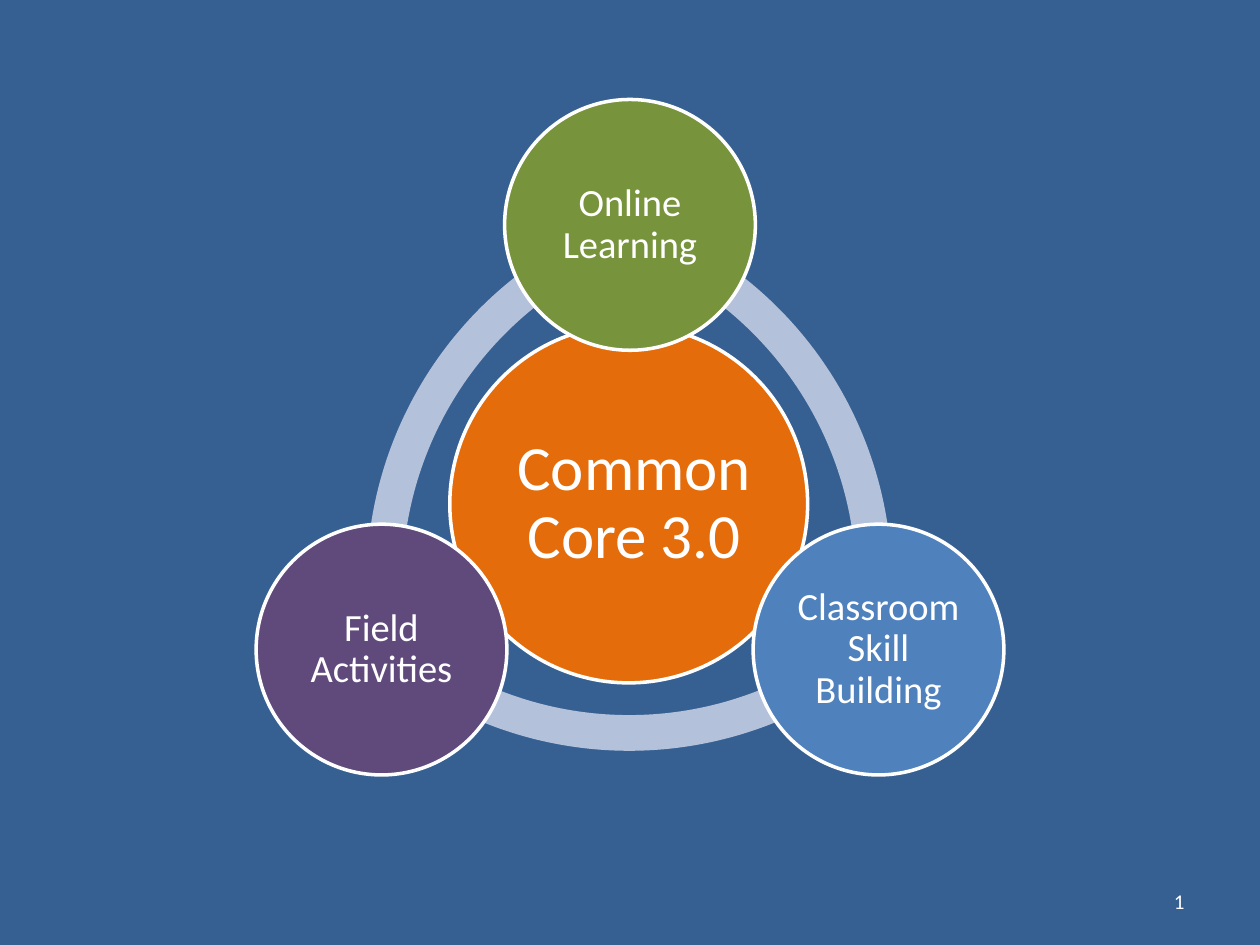
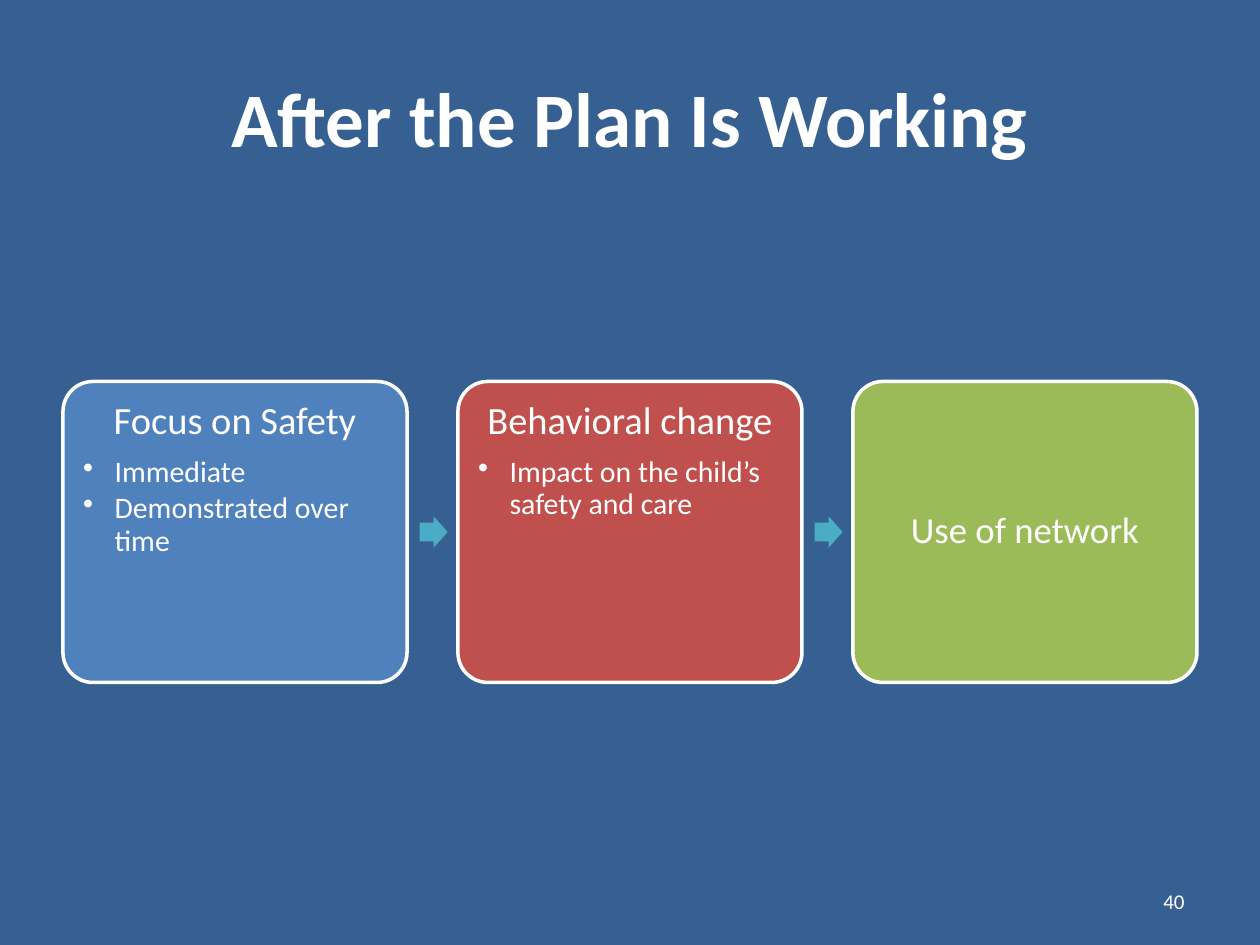
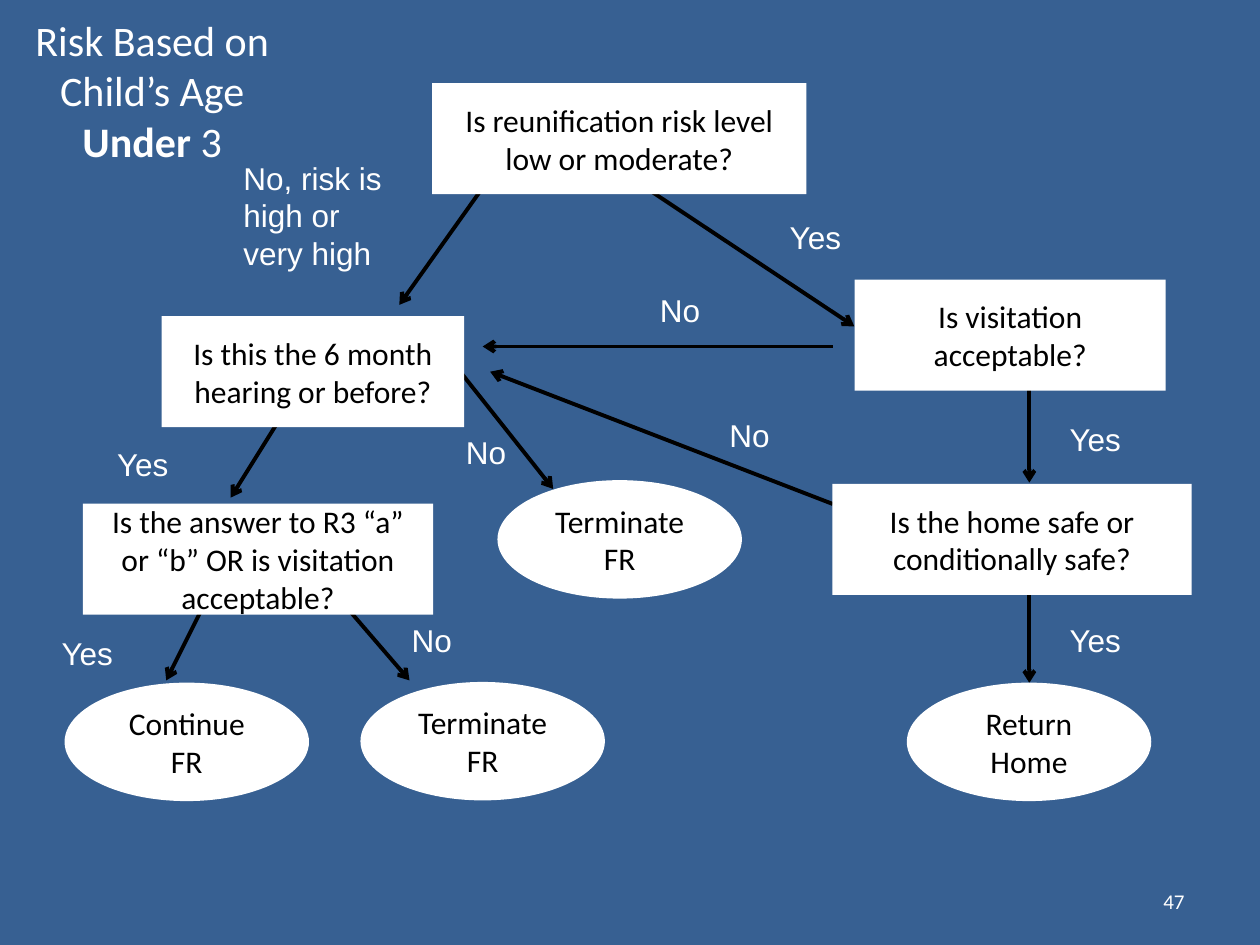
"""Build three training slides: the curriculum ring, a step process and a risk decision tree."""
from dataclasses import dataclass
from typing import NamedTuple

from lxml.etree import SubElement
from pptx import Presentation
from pptx.dml.color import RGBColor
from pptx.enum.shapes import MSO_CONNECTOR as Connector, MSO_SHAPE as Shape
from pptx.enum.text import MSO_ANCHOR as Anchor, PP_ALIGN as Align
from pptx.oxml.ns import qn
from pptx.util import Pt


@dataclass(frozen=True)
class Theme:
    background: str = "376092"
    white: str = "FFFFFF"
    black: str = "000000"
    ring: str = "B3C1DB"
    orange: str = "E46C0A"
    olive: str = "77933C"
    blue: str = "4F81BD"
    purple: str = "604A7B"
    red: str = "C0504D"
    green: str = "9BBB59"
    teal: str = "4BACC6"
    font: str = "Calibri"
    label_font: str = "Arial"
    title: int = 44
    hub: int = 36
    side_title: int = 24
    heading: int = 22
    last_heading: int = 21
    body: int = 18
    bullet: int = 17
    footer: int = 12


THEME = Theme()
TEXT_INSETS = (7.2, 3.6, 7.2, 3.6)


class Box(NamedTuple):
    left: float
    top: float
    width: float
    height: float


class Circle(NamedTuple):
    text: str
    x: float
    y: float
    diameter: float
    fill: str
    size: int
    insets: tuple


class Arc(NamedTuple):
    x: float
    y: float
    start: float
    end: float


class Step(NamedTuple):
    heading: str
    size: int
    fill: str
    bullets: tuple


class Node(NamedTuple):
    text: str
    left: float
    top: float
    width: float = 139.7
    height: float = 67.7
    kind: Shape = Shape.OVAL


class Label(NamedTuple):
    text: str
    left: float
    top: float
    width: float = 62.6
    height: float = 28.8


class Arrow(NamedTuple):
    x1: float
    y1: float
    x2: float
    y2: float


CIRCLE_INSETS = (2.2,) * 4
CIRCLES = (
    Circle("Common Core 3.0", 359.3, 288, 204.5, THEME.orange, THEME.hub, (7.2, 3.6, 0.8, 3.6)),
    Circle("Online Learning", 360, 128.5, 143.3, THEME.olive, THEME.heading, CIRCLE_INSETS),
    Circle("Classroom Skill Building", 502, 371.2, 143.3, THEME.blue, THEME.heading, CIRCLE_INSETS),
    Circle("Field Activities", 218, 371.2, 143.3, THEME.purple, THEME.heading, CIRCLE_INSETS),
)
ARC_DIAMETER = 444.2
ARCS = (
    Arc(431.6, 333, 101.93, 150.38),
    Arc(359.6, 207, 29.55, 78.45),
    Arc(287.6, 333, 173.62, 6.07),
)

STEPS = (
    Step("Focus on Safety", THEME.heading, THEME.blue, ("Immediate", "Demonstrated over time")),
    Step("Behavioral change", THEME.heading, THEME.red, ("Impact on the child’s safety and care",)),
    Step("Use of network", THEME.last_heading, THEME.green, ()),
)

QUESTION_HEIGHT = 63.4
QUESTIONS = tuple(
    Node(text, left, top, width, QUESTION_HEIGHT, Shape.RECTANGLE)
    for text, left, top, width in (
        ("Is reunification risk level low or moderate?", 247, 47.5, 213.8),
        ("Is this the 6 month hearing or before?", 92.4, 180.7, 172.8),
        ("Is visitation acceptable?", 488.4, 159.8, 177.8),
        ("Is the answer to R3 “a” or “b” OR is visitation acceptable?", 47.3, 287.8, 200.2),
        ("Is the home safe or conditionally safe?", 475.7, 276.5, 205.2),
    )
)
OUTCOMES = (
    Node("Terminate FR", 284.3, 274.4),
    Node("Terminate FR", 206, 389.7),
    Node("Continue FR", 36.9, 390.1),
    Node("Return Home", 518.2, 390.1),
)
LABELS = (
    Label("No, risk is high or very high", 132, 87.1, 96, 72.7),
    Label("Yes", 444.2, 121),
    Label("No", 370, 162.7),
    Label("No", 409.7, 234),
    Label("Yes", 604.1, 236.2),
    Label("No", 259.2, 244.1),
    Label("Yes", 59.8, 250.6),
    Label("Yes", 604.1, 351.4),
    Label("No", 228.2, 351.4),
    Label("Yes", 28.1, 358.6),
)
ARROWS = (
    Arrow(177, 322.6, 234, 388.8),
    Arrow(118, 342.7, 95, 388.8),
    Arrow(588.2, 336.2, 588.2, 390.2),
    Arrow(588.2, 207.4, 588.2, 275.8),
    Arrow(372.2, 109.4, 488.2, 186.5),
    Arrow(290.2, 87.1, 228.2, 174.2),
    Arrow(167.8, 226.8, 131.8, 284.4),
    Arrow(244.1, 188.6, 316.1, 279.4),
    Arrow(475.9, 198, 275.8, 198),
    Arrow(475.9, 288, 280.1, 212.4),
)


def rgb(color: str) -> RGBColor:
    """Turn a hex value into a colour."""
    return RGBColor.from_string(color)


def write(paragraph, text: str, *, size: float, color: str = THEME.white, font: str = THEME.font,
          bold: bool = False, align: Align = Align.CENTER, spacing: float | None = None,
          after: float | None = None, bullet: str = "") -> None:
    """Add a run of formatted text to a paragraph."""
    run = paragraph.add_run()
    run.text = text
    run.font.size = Pt(size)
    run.font.name = font
    run.font.bold = bold
    run.font.color.rgb = rgb(color)
    paragraph.alignment = align
    if spacing is not None:
        paragraph.line_spacing = spacing
    if after is not None:
        paragraph.space_after = Pt(after)
    if bullet:
        properties = paragraph._p.get_or_add_pPr()
        properties.set("marL", str(Pt(18)))
        properties.set("indent", str(-Pt(18)))
        SubElement(properties, qn("a:buChar")).set("char", bullet)


def set_frame(shape, anchor: Anchor = Anchor.MIDDLE, insets: tuple = TEXT_INSETS):
    """Prepare the text frame of a shape and return it."""
    frame = shape.text_frame
    frame.word_wrap = True
    frame.vertical_anchor = anchor
    frame.margin_left, frame.margin_top, frame.margin_right, frame.margin_bottom = map(Pt, insets)
    return frame


def add_box(slide, box: Box, anchor: Anchor = Anchor.MIDDLE):
    """Add a text box and return its first paragraph."""
    return set_frame(slide.shapes.add_textbox(*map(Pt, box)), anchor).paragraphs[0]


def add_figure(slide, kind: Shape, box: Box, fill: str, outline: str = "", adjust: tuple = ()):
    """Add a flat preset shape."""
    figure = slide.shapes.add_shape(kind, *map(Pt, box))
    figure.shadow.inherit = False
    figure.fill.solid()
    figure.fill.fore_color.rgb = rgb(fill)
    if outline:
        figure.line.color.rgb = rgb(outline)
        figure.line.width = Pt(2)
    else:
        figure.line.fill.background()
    for index, value in enumerate(adjust):
        figure.adjustments[index] = value
    return figure


def centred(x: float, y: float, diameter: float) -> Box:
    """Return the square box around a centre."""
    return Box(x - diameter / 2, y - diameter / 2, diameter, diameter)


def draw_arc(slide, arc: Arc) -> None:
    """Draw one section of the ring."""
    add_figure(slide, Shape.BLOCK_ARC, centred(arc.x, arc.y, ARC_DIAMETER), THEME.ring,
               adjust=(arc.start, arc.end, 0.046))


def draw_circle(slide, circle: Circle) -> None:
    """Draw a captioned circle."""
    disc = add_figure(slide, Shape.OVAL, centred(circle.x, circle.y, circle.diameter),
                      circle.fill, THEME.white)
    caption = set_frame(disc, insets=circle.insets).paragraphs[0]
    write(caption, circle.text, size=circle.size, spacing=0.9, after=circle.size * 0.35)


def draw_step(slide, step: Step, box: Box) -> None:
    """Draw a process card with its heading and bullets."""
    card = add_figure(slide, Shape.ROUNDED_RECTANGLE, box, step.fill, THEME.white, (0.1,))
    anchor = Anchor.TOP if step.bullets else Anchor.MIDDLE
    frame = set_frame(card, anchor, (6.5,) * 4)
    write(frame.paragraphs[0], step.heading, size=step.size, spacing=0.9, after=step.size * 0.35)
    for item in step.bullets:
        write(frame.add_paragraph(), item, size=THEME.bullet, align=Align.LEFT, spacing=0.9,
              after=THEME.bullet * 0.15, bullet="•")


def draw_node(slide, node: Node) -> None:
    """Draw a question or an outcome of the tree."""
    box = Box(node.left, node.top, node.width, node.height)
    figure = add_figure(slide, node.kind, box, THEME.white)
    write(set_frame(figure).paragraphs[0], node.text, size=THEME.body, color=THEME.black)


def draw_label(slide, label: Label) -> None:
    """Draw the answer beside an arrow."""
    box = Box(label.left, label.top, label.width, label.height)
    write(add_box(slide, box, Anchor.TOP), label.text, size=THEME.body,
          font=THEME.label_font, align=Align.LEFT)


def draw_arrow(slide, arrow: Arrow) -> None:
    """Draw a straight line with an open arrowhead."""
    link = slide.shapes.add_connector(Connector.STRAIGHT, *map(Pt, arrow))
    link.line.color.rgb = rgb(THEME.black)
    link.line.width = Pt(2.25)
    SubElement(link.line._get_or_add_ln(), qn("a:tailEnd")).set("type", "arrow")
    SubElement(link._element.spPr, qn("a:effectLst"))


def new_slide(deck, number: int):
    """Add a blank slide with its page number."""
    slide = deck.slides.add_slide(deck.slide_layouts[6])
    write(add_box(slide, Box(516, 500.5, 168, 28.8)), str(number), size=THEME.footer,
          align=Align.RIGHT)
    return slide


def build_ring(deck) -> None:
    """Build the curriculum ring."""
    slide = new_slide(deck, 1)
    for arc in ARCS:
        draw_arc(slide, arc)
    for circle in CIRCLES:
        draw_circle(slide, circle)


def build_process(deck) -> None:
    """Build the three-step process."""
    slide = new_slide(deck, 40)
    write(add_box(slide, Box(36, 21.6, 648, 90)), "After the Plan Is Working",
          size=THEME.title, bold=True)
    left, top, width, height = 36, 218, 196.6, 172
    gap = (648 - len(STEPS) * width) / (len(STEPS) - 1)
    for index, step in enumerate(STEPS):
        x = left + index * (width + gap)
        if index:
            add_figure(slide, Shape.RIGHT_ARROW, Box(x - gap + 7.2, top + height / 2 - 9, 16, 18),
                       THEME.teal, adjust=(0.6, 0.5))
        draw_step(slide, step, Box(x, top, width, height))


def build_tree(deck) -> None:
    """Build the risk decision tree."""
    slide = new_slide(deck, 47)
    for arrow in ARROWS:
        draw_arrow(slide, arrow)
    title = add_box(slide, Box(12, 6.5, 150, 90))
    write(title, "Risk Based on Child’s Age", size=THEME.side_title)
    title.add_line_break()
    write(title, "Under", size=THEME.side_title, bold=True)
    write(title, " 3", size=THEME.side_title)
    for node in QUESTIONS + OUTCOMES:
        draw_node(slide, node)
    for label in LABELS:
        draw_label(slide, label)


def main() -> None:
    """Build and save the deck."""
    deck = Presentation()
    deck.slide_width, deck.slide_height = Pt(720), Pt(540)
    backdrop = deck.slide_master.background.fill
    backdrop.solid()
    backdrop.fore_color.rgb = rgb(THEME.background)
    build_ring(deck)
    build_process(deck)
    build_tree(deck)
    deck.save("out.pptx")


if __name__ == "__main__":
    main()
